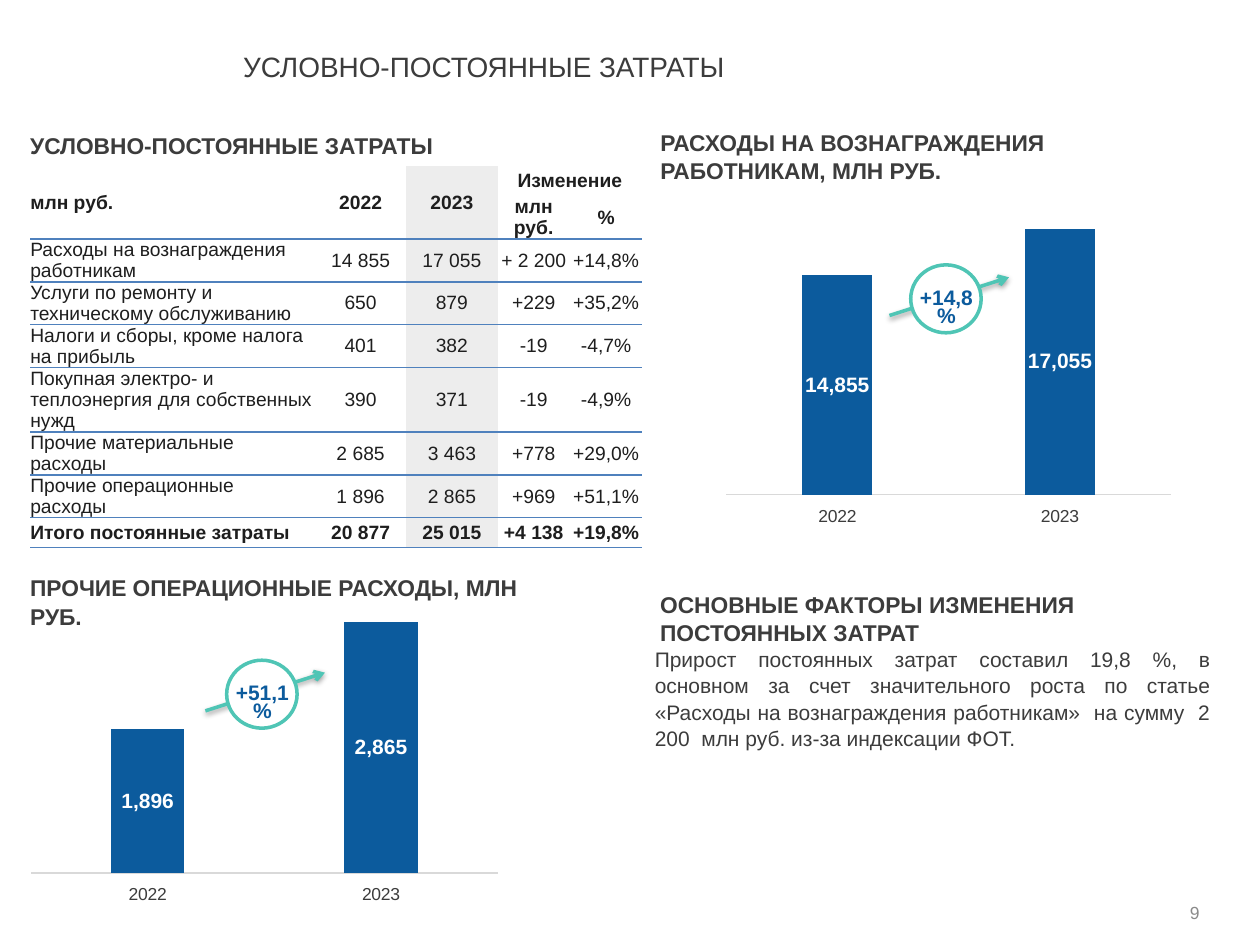
from dataclasses import dataclass

from lxml import etree
from pptx import Presentation
from pptx.chart.data import CategoryChartData
from pptx.dml.color import RGBColor
from pptx.enum.chart import XL_CHART_TYPE, XL_LABEL_POSITION, XL_TICK_LABEL_POSITION, XL_TICK_MARK
from pptx.enum.shapes import MSO_CONNECTOR, MSO_SHAPE
from pptx.enum.text import MSO_ANCHOR, MSO_AUTO_SIZE, PP_ALIGN
from pptx.oxml import parse_xml
from pptx.oxml.ns import nsdecls, qn
from pptx.util import Cm, Pt

LEFT, CENTER, RIGHT, JUSTIFY = PP_ALIGN.LEFT, PP_ALIGN.CENTER, PP_ALIGN.RIGHT, PP_ALIGN.JUSTIFY
TOP, MIDDLE = MSO_ANCHOR.TOP, MSO_ANCHOR.MIDDLE
COLUMN = XL_CHART_TYPE.COLUMN_CLUSTERED
LABEL_CENTER = XL_LABEL_POSITION.CENTER
TICK_NONE = XL_TICK_MARK.NONE
TICK_LOW = XL_TICK_LABEL_POSITION.LOW
ELLIPSE = MSO_SHAPE.OVAL
STRAIGHT = MSO_CONNECTOR.STRAIGHT
NO_AUTOFIT, GROW = MSO_AUTO_SIZE.NONE, MSO_AUTO_SIZE.SHAPE_TO_FIT_TEXT
PLAIN_TABLE = "{2D5ABB26-0587-4C30-8999-92F81FD0307C}"


@dataclass(frozen=True)
class Theme:
    font: str = "Arial"
    text: str = "3C3C3C"
    table_text: str = "1E1E1E"
    blue: str = "0C5B9D"
    teal: str = "4FC5B5"
    rule: str = "4F81BD"
    axis: str = "D9D9D9"
    shade: str = "EDEDED"
    white: str = "FFFFFF"
    muted: str = "8A8A8A"
    title_size: float = 16
    heading_size: float = 13
    body_size: float = 12
    table_size: float = 11
    small_size: float = 10


T = Theme()

ROWS = [
    ("Расходы на вознаграждения работникам", "14 855", "17 055", "+ 2 200", "+14,8%"),
    ("Услуги по ремонту и техническому обслуживанию", "650", "879", "+229", "+35,2%"),
    ("Налоги и сборы, кроме налога на прибыль", "401", "382", "-19", "-4,7%"),
    ("Покупная электро- и теплоэнергия для собственных нужд", "390", "371", "-19", "-4,9%"),
    ("Прочие материальные расходы", "2 685", "3 463", "+778", "+29,0%"),
    ("Прочие операционные расходы", "1 896", "2 865", "+969", "+51,1%"),
    ("Итого постоянные затраты", "20 877", "25 015", "+4 138", "+19,8%"),
]
HEADER = [
    ("млн руб.", "2022", "2023", "Изменение", ""),
    ("", "", "", "млн руб.", "%"),
]
FACTORS = ("Прирост постоянных затрат составил 19,8 %, в основном за счет значительного "
           "роста по статье «Расходы на вознаграждения работникам»  на сумму  2 200  млн руб. "
           "из-за индексации ФОТ.")


def rgb(value):
    return RGBColor.from_string(value)


def set_font(font, size, color, bold=False):
    font.name = T.font
    font.size = Pt(size)
    font.bold = bold
    font.color.rgb = rgb(color)


def write(tf, text, size, color=T.text, bold=False, align=LEFT, spacing=1.0):
    tf.text = text
    p = tf.paragraphs[0]
    p.alignment = align
    p.line_spacing = spacing
    p.space_before = Pt(0)
    for r in p.runs:
        set_font(r.font, size, color, bold)
    return p


def place(sp, x, y, w, h):
    sp.left, sp.top, sp.width, sp.height = Cm(x), Cm(y), Cm(w), Cm(h)


def set_frame(tf, anchor=TOP, inset=0.0, auto_size=NO_AUTOFIT):
    tf.word_wrap = True
    tf.auto_size = auto_size
    tf.vertical_anchor = anchor
    tf.margin_left = tf.margin_right = Cm(inset)
    tf.margin_top = tf.margin_bottom = Cm(inset / 2)


def add_text(shapes, x, y, w, h, text, size, anchor=TOP, inset=0.0, auto_size=NO_AUTOFIT, **style):
    sp = shapes.add_textbox(Cm(x), Cm(y), Cm(w), Cm(h))
    set_frame(sp.text_frame, anchor, inset, auto_size)
    write(sp.text_frame, text, size, **style)


def add_heading(slide, x, y, w, h, text):
    add_text(slide.shapes, x, y, w, h, text, T.heading_size, bold=True, spacing=1.03)


def fill_title(slide, x, y, w, h, text):
    sp = slide.shapes.title
    place(sp, x, y, w, h)
    set_frame(sp.text_frame)
    write(sp.text_frame, text, T.title_size, spacing=0.9)


def fill_body_heading(slide, x, y, w, h, text):
    sp = slide.placeholders[1]
    place(sp, x, y, w, h)
    set_frame(sp.text_frame)
    p = write(sp.text_frame, text, T.heading_size, bold=True, spacing=1.03)
    pPr = p._p.get_or_add_pPr()
    pPr.set("marL", "0")
    pPr.set("indent", "0")
    etree.SubElement(pPr, qn("a:buNone"))


def add_growth_badge(slide, x, y, text):
    shapes = slide.shapes.add_group_shape().shapes
    arrow = shapes.add_connector(STRAIGHT, Cm(x), Cm(y + 1.02), Cm(x + 2.41), Cm(y + 0.25))
    arrow.line.color.rgb = rgb(T.teal)
    arrow.line.width = Pt(2)
    etree.SubElement(arrow.line._get_or_add_ln(), qn("a:tailEnd"), type="arrow")
    arrow._element.spPr.append(parse_xml(
        f'<a:effectLst {nsdecls("a")}><a:outerShdw blurRad="40000" dist="20000" dir="5400000" '
        'rotWithShape="0"><a:srgbClr val="000000"><a:alpha val="38000"/></a:srgbClr>'
        '</a:outerShdw></a:effectLst>'))
    sp = shapes.add_shape(ELLIPSE, Cm(x + 0.43), Cm(y), Cm(1.42), Cm(1.37))
    sp.shadow.inherit = False
    sp.fill.solid()
    sp.fill.fore_color.rgb = rgb(T.white)
    sp.line.color.rgb = rgb(T.teal)
    sp.line.width = Pt(2)
    add_text(shapes, x + 0.25, y + 0.41, 1.8, 0.64, text, T.body_size, inset=0.25,
             auto_size=GROW, color=T.blue, bold=True, align=CENTER, spacing=0.7)


def add_year_chart(slide, x, y, w, h, values, low, high):
    data = CategoryChartData(number_format="#,##0")
    data.categories = ["2022", "2023"]
    data.add_series("Series 1", values)
    chart = slide.shapes.add_chart(COLUMN, Cm(x), Cm(y), Cm(w), Cm(h), data).chart
    chart.has_legend = chart.has_title = False
    set_font(chart.font, T.small_size, T.text)
    val = chart.value_axis
    val.minimum_scale, val.maximum_scale = low, high
    val.has_major_gridlines = val.visible = False
    cat = chart.category_axis
    cat.major_tick_mark = cat.minor_tick_mark = TICK_NONE
    cat.tick_label_position = TICK_LOW
    cat.format.line.color.rgb = rgb(T.axis)
    cat.format.line.width = Pt(0.75)
    plot = chart.plots[0]
    plot.gap_width = 219
    plot.vary_by_categories = False
    series = plot.series[0]
    series.format.fill.solid()
    series.format.fill.fore_color.rgb = rgb(T.blue)
    labels = series.data_labels
    labels.show_value = True
    labels.number_format, labels.number_format_is_linked = "#,##0", False
    labels.position = LABEL_CENTER
    set_font(labels.font, T.body_size, T.white, True)
    area = chart._chartSpace.chart.plotArea
    for old in area.findall(qn("c:layout")):
        area.remove(old)
    area.insert(0, parse_xml(
        f'<c:layout {nsdecls("c")}><c:manualLayout><c:layoutTarget val="inner"/>'
        '<c:xMode val="edge"/><c:yMode val="edge"/><c:x val="0.02"/><c:y val="0.02"/>'
        '<c:w val="0.96"/><c:h val="0.89"/></c:manualLayout></c:layout>'))


def add_bottom_rule(cell):
    ln = etree.SubElement(cell._tc.get_or_add_tcPr(), qn("a:lnB"), w=str(Pt(1)))
    fill = etree.SubElement(ln, qn("a:solidFill"))
    etree.SubElement(fill, qn("a:srgbClr"), val=T.rule)


def add_cost_table(slide, x, y):
    widths = [5.74, 1.84, 1.84, 1.46, 1.46]
    rows = HEADER + ROWS
    table = slide.shapes.add_table(len(rows), len(widths), Cm(x), Cm(y),
                                   Cm(sum(widths)), Cm(0.6 * len(rows))).table
    table._tbl.tblPr.find(qn("a:tableStyleId")).text = PLAIN_TABLE
    table.first_row = table.horz_banding = False
    for col, width in zip(table.columns, widths):
        col.width = Cm(width)
    for i, row in enumerate(rows):
        table.rows[i].height = Cm(0.6)
        for j, text in enumerate(row):
            cell = table.cell(i, j)
            cell.margin_left = cell.margin_top = cell.margin_bottom = 0
            cell.margin_right = Cm(0 if j else 0.05)
            cell.vertical_anchor = MIDDLE
            if i or j < 3:
                add_bottom_rule(cell)
            if j == 2:
                cell.fill.solid()
                cell.fill.fore_color.rgb = rgb(T.shade)
            else:
                cell.fill.background()
            write(cell.text_frame, text, T.table_size, T.table_text,
                  i < len(HEADER) or i == len(rows) - 1, CENTER if j else LEFT)
    for j in range(3):
        table.cell(0, j).merge(table.cell(1, j))
    table.cell(0, 3).merge(table.cell(0, 4))


def add_costs(slide, x, y):
    add_heading(slide, x, y, 10.85, 0.69, "УСЛОВНО-ПОСТОЯННЫЕ ЗАТРАТЫ")
    add_cost_table(slide, x, y + 0.71)


def add_staff_costs(slide, x, y):
    fill_body_heading(slide, x, y, 10.19, 1.5, "РАСХОДЫ НА ВОЗНАГРАЖДЕНИЯ РАБОТНИКАМ, МЛН РУБ.")
    add_year_chart(slide, x + 1.14, y + 1.29, 9.35, 6.76, (14855, 17055), 4500, 18500)
    add_growth_badge(slide, x + 4.62, y + 2.77, "+14,8%")


def add_other_costs(slide, x, y):
    add_heading(slide, x, y, 10.85, 1.5, "ПРОЧИЕ ОПЕРАЦИОННЫЕ РАСХОДЫ, МЛН РУБ.")
    add_year_chart(slide, x - 0.18, y + 0.33, 9.8, 6.35, (1896, 2865), 600, 3100)
    add_growth_badge(slide, x + 3.53, y + 1.75, "+51,1%")


def add_factors(slide, x, y):
    add_heading(slide, x, y, 11.68, 0.28, "ОСНОВНЫЕ ФАКТОРЫ ИЗМЕНЕНИЯ ПОСТОЯННЫХ ЗАТРАТ")
    add_text(slide.shapes, x - 0.36, y + 0.99, 11.71, 1.8, FACTORS, T.body_size,
             inset=0.25, auto_size=GROW, align=JUSTIFY, spacing=1.05)


def main():
    prs = Presentation()
    prs.slide_width, prs.slide_height = Cm(25.4), Cm(19.05)
    slide = prs.slides.add_slide(prs.slide_layouts[1])
    fill_title(slide, 4.9, 1.07, 19.3, 1.19, "УСЛОВНО-ПОСТОЯННЫЕ ЗАТРАТЫ")
    add_costs(slide, 0.61, 2.64)
    add_staff_costs(slide, 13.31, 2.57)
    add_other_costs(slide, 0.61, 11.56)
    add_factors(slide, 13.31, 11.89)
    add_text(slide.shapes, 23.09, 18.16, 1.09, 0.46, "9", T.small_size, MIDDLE,
             color=T.muted, align=RIGHT)
    prs.save("out.pptx")


if __name__ == "__main__":
    main()
